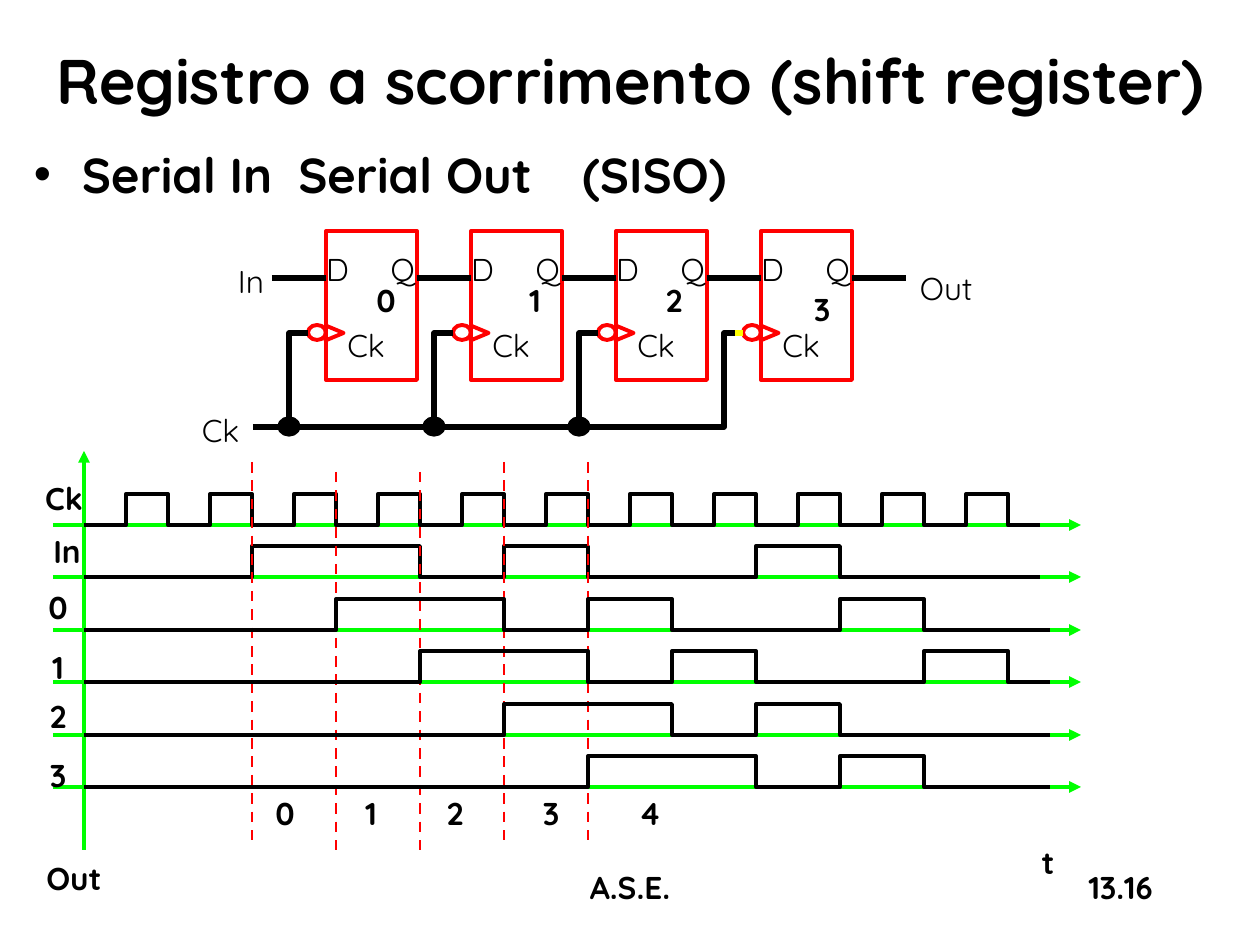
from pptx import Presentation
from pptx.dml.color import RGBColor
from pptx.enum.dml import MSO_LINE
from pptx.enum.shapes import MSO_CONNECTOR, MSO_SHAPE
from pptx.enum.text import MSO_ANCHOR, PP_ALIGN
from pptx.oxml.ns import qn
from pptx.util import Pt
from lxml import etree

EMU_PER_PX = 914400 / 126
LEFT, CENTER, RIGHT = PP_ALIGN.LEFT, PP_ALIGN.CENTER, PP_ALIGN.RIGHT
MIDDLE = MSO_ANCHOR.MIDDLE
STRAIGHT = MSO_CONNECTOR.STRAIGHT
RECT, OVAL, TRIANGLE = MSO_SHAPE.RECTANGLE, MSO_SHAPE.OVAL, MSO_SHAPE.ISOSCELES_TRIANGLE
DASH = MSO_LINE.DASH

FONT = "Quicksand"
BLACK, RED, GREEN, YELLOW = "000000", "FF0000", "00FF00", "FFFF00"
WIRE, OUTLINE = 3, 2.25


def px(value):
    return round(value * EMU_PER_PX)


def rgb(hex_color):
    return RGBColor.from_string(hex_color)


def text(slide, box, content, size=18, bold=True, align=CENTER, wrap=True):
    """Write one line, centred vertically in box; return its paragraph."""
    frame = slide.shapes.add_textbox(*map(px, box)).text_frame
    frame.margin_left = frame.margin_right = frame.margin_top = frame.margin_bottom = 0
    frame.word_wrap = wrap
    frame.vertical_anchor = MIDDLE
    paragraph = frame.paragraphs[0]
    paragraph.alignment = align
    paragraph.font.size = Pt(size)
    for part in [content] if isinstance(content, str) else content:
        run = paragraph.add_run()
        run.text = part
        run.font.name = FONT
        run.font.size = Pt(size)
        run.font.bold = bold
        run.font.color.rgb = rgb(BLACK)
    return paragraph


def label(slide, x, y, content, **format_options):
    """Write a short text centred on the point x, y."""
    text(slide, (x - 40, y - 20, 80, 40), content, **format_options)


def line(slide, start, end, color=BLACK, width=WIRE, dash=None, arrow=False):
    connector = slide.shapes.add_connector(STRAIGHT, *map(px, (*start, *end)))
    connector.line.color.rgb = rgb(color)
    connector.line.width = Pt(width)
    if dash:
        connector.line.dash_style = dash
    if arrow:
        etree.SubElement(connector.line._get_or_add_ln(), qn("a:tailEnd"), type="triangle")
    etree.SubElement(connector._element.spPr, qn("a:effectLst"))


def style(shape, color, width, fill=None):
    shape.shadow.inherit = False
    shape.line.color.rgb = rgb(color)
    shape.line.width = Pt(width)
    if fill:
        shape.fill.solid()
        shape.fill.fore_color.rgb = rgb(fill)
    else:
        shape.fill.background()


def preset(slide, kind, box, color=RED, width=OUTLINE, fill=None, rotation=0):
    shape = slide.shapes.add_shape(kind, *map(px, box))
    shape.rotation = rotation
    style(shape, color, width, fill)


def polyline(slide, points, width):
    start, *rest = [(px(x), px(y)) for x, y in points]
    builder = slide.shapes.build_freeform(*start)
    builder.add_line_segments(rest, close=False)
    style(builder.convert_to_shape(), BLACK, width)


def header(slide, left, top, width):
    text(slide, (left, top, width, 116), "Registro a scorrimento (shift register)", size=36)
    parts = ["Serial In", " ", "Serial Out", " ", "(SISO)"]
    subtitle = text(slide, (left + 13, top + 122, width - 26, 61), parts, size=28, align=LEFT)
    for gap, spacing in ((1, 700), (3, 2100)):
        subtitle.runs[gap].font._element.set("spc", str(spacing))
    properties = subtitle._p.get_or_add_pPr()
    properties.set("marL", str(px(48)))
    properties.set("indent", str(px(-48)))
    etree.SubElement(properties, qn("a:buFont"), typeface="Arial")
    etree.SubElement(properties, qn("a:buChar"), char="•")


def flip_flop(slide, left, top, number, number_x, number_y):
    preset(slide, RECT, (left, top, 91, 149))
    preset(slide, TRIANGLE, (left + 1, top + 93, 15, 18), rotation=90)
    preset(slide, OVAL, (left - 18, top + 94, 18, 15))
    text(slide, (left, top + 18, 30, 40), "D", bold=False, align=LEFT)
    text(slide, (left + 59, top + 18, 30, 40), "Q", bold=False, align=RIGHT)
    label(slide, left + 40, top + 114, "Ck", bold=False)
    label(slide, left + number_x, top + number_y, number)


def circuit(slide, left, top):
    first, pitch, body, lead = left + 124, 145, 91, 54
    data_y, clock_y, bus_y = top + 47, top + 102, top + 196
    numbers = [("0", 60, 69), ("1", 64, 69), ("2", 58, 69), ("3", 61, 78)]
    stages = [first + pitch * i for i in range(len(numbers))]

    for name, x, y in (("In", left + 36, top + 50), ("Ck", left, top + 199),
                       ("Out", left + 718, top + 57)):
        text(slide, (x, y - 20, 60, 40), name, bold=False, align=LEFT, wrap=False)

    for stage, number in zip(stages, numbers):
        flip_flop(slide, stage, top, *number)
        line(slide, (stage - lead, data_y), (stage, data_y))
    line(slide, (stages[-1] + body, data_y), (stages[-1] + body + lead, data_y))

    for stage in stages[:-1]:
        node = stage - 37
        polyline(slide, [(stage - 18, clock_y), (node, clock_y), (node, bus_y)], WIRE)
        preset(slide, OVAL, (node - 9, bus_y - 8, 18, 15), BLACK, WIRE, BLACK)
    corner, tip = stages[-1] - 37, stages[-1] - 26
    polyline(slide, [(left + 51, bus_y), (corner, bus_y), (corner, clock_y), (tip, clock_y)], WIRE)
    line(slide, (tip, clock_y), (tip + 8, clock_y), YELLOW)


def waveform(slide, start, end, base, edges):
    """Draw a signal that starts low at base and toggles at each edge."""
    points, levels = [(start, base)], (base, base - 31)
    for i, x in enumerate(edges):
        points += [(x, levels[i % 2]), (x, levels[(i + 1) % 2])]
    polyline(slide, points + [(end, base)], OUTLINE)


def timing_diagram(slide, left, top):
    origin, period = left + 31, 84
    bases = [top + 74 + 105 * i // 2 for i in range(6)]

    line(slide, (origin, top + 399), (origin, top), GREEN, OUTLINE, arrow=True)
    for base in bases:
        line(slide, (left, base), (left + 1028, base), GREEN, OUTLINE, arrow=True)

    names = [("Ck", 11, 47), ("In", 14, 100), ("0", 5, 156), ("1", 5, 216),
             ("2", 5, 265), ("3", 5, 324), ("Out", 21, 427), ("t", 995, 411)]
    for name, x, y in names:
        label(slide, left + x, top + y, name)
    for number, x in enumerate((232, 318, 402, 498, 597)):
        label(slide, left + x, top + 362, str(number))

    clock = [i / 2 for i in range(1, 23)]
    data = [2, 4, 5, 6, 8, 9]
    # Each stage repeats the input one period later than the stage before it.
    stages = [[edge + delay for edge in data if edge + delay <= 11] for delay in range(1, 5)]
    stages[2:] = [edges[:4] for edges in stages[2:]]

    def draw(signals, rows, end):
        for edges, base in zip(signals, rows):
            waveform(slide, origin, end, base, [origin + period * edge for edge in edges])

    draw([clock, data], bases[:2], left + 987)
    for i, drop in enumerate((11, 21, 21, 11, 11)):
        x = origin + period * (i + 2)
        line(slide, (x, top + drop), (x, top + drop + 378), RED, 1.5, dash=DASH)
    draw(stages, bases[2:], left + 997)


def footer(slide, left, top, width):
    text(slide, (left, top, width, 40), "A.S.E.")
    text(slide, (left, top, width - 86, 40), "13.16", align=RIGHT)


def main():
    presentation = Presentation()
    presentation.slide_width, presentation.slide_height = px(1260), px(945)
    slide = presentation.slides.add_slide(presentation.slide_layouts[6])
    header(slide, 21, 21, 1218)
    circuit(slide, 202, 231)
    timing_diagram(slide, 53, 451)
    footer(slide, 21, 867, 1218)
    presentation.save("out.pptx")


if __name__ == "__main__":
    main()
